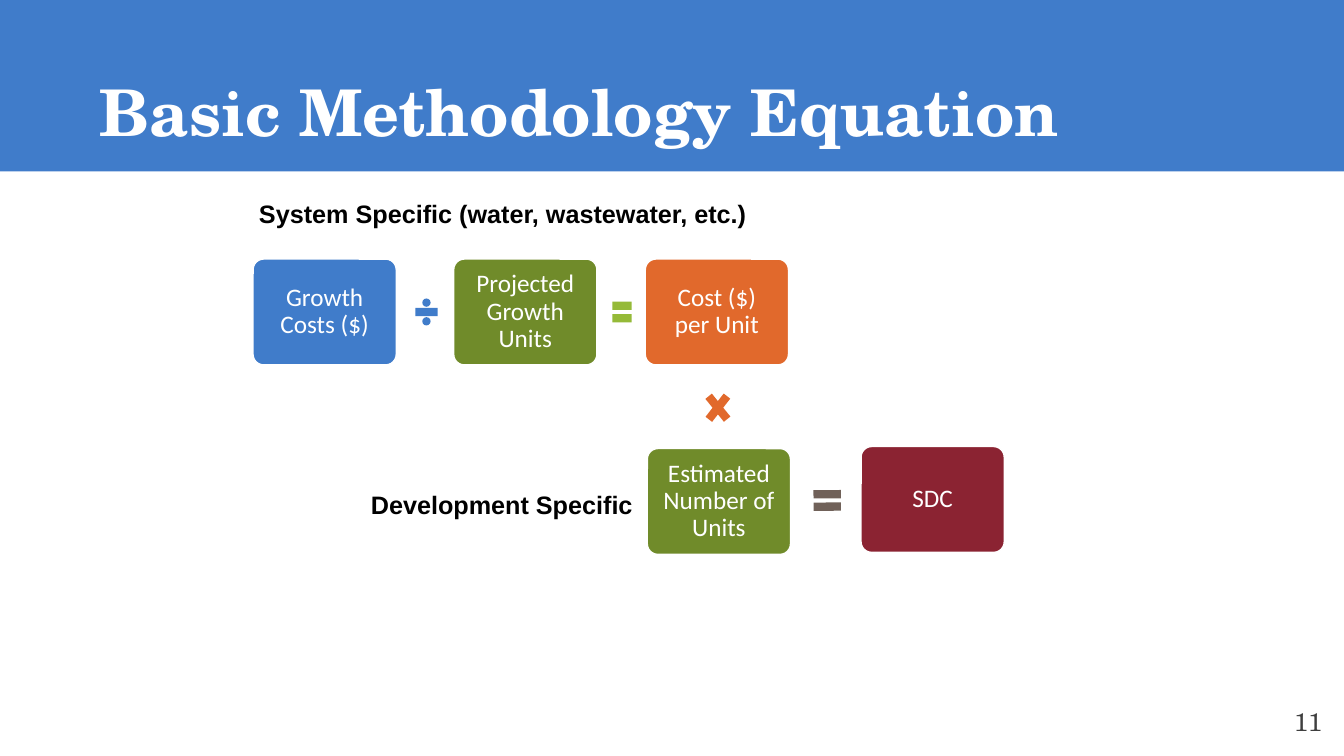
from pptx import Presentation
from pptx.dml.color import RGBColor
from pptx.enum.shapes import MSO_SHAPE
from pptx.enum.text import MSO_ANCHOR, PP_ALIGN
from pptx.util import Inches, Pt

BLUE = RGBColor(0x40, 0x7C, 0xCA)
GREEN = RGBColor(0x70, 0x8B, 0x2A)
LIME = RGBColor(0x95, 0xBA, 0x38)
ORANGE = RGBColor(0xE1, 0x69, 0x2C)
TAUPE = RGBColor(0x70, 0x61, 0x59)
MAROON = RGBColor(0x8B, 0x23, 0x32)
WHITE = RGBColor(0xFF, 0xFF, 0xFF)
BLACK = RGBColor(0, 0, 0)
GREY = RGBColor(0x3F, 0x3F, 0x3F)

SERIF = "TeX Gyre Schola"
TERM_WIDTH, TERM_HEIGHT = 1.42, 1.05
SIGN_HEIGHT = 0.35


def write(frame, text, font_name, size, color, bold=False, align=PP_ALIGN.LEFT):
    frame.word_wrap = True
    frame.text = text
    paragraph = frame.paragraphs[0]
    paragraph.alignment = align
    font = paragraph.font
    font.name, font.size, font.bold = font_name, Pt(size), bold
    font.color.rgb = color
    return paragraph


def add_label(slide, box, text, *style, **options):
    label = slide.shapes.add_textbox(*map(Inches, box))
    write(label.text_frame, text, *style, **options)


def add_block(slide, preset, box, color):
    block = slide.shapes.add_shape(preset, *map(Inches, box))
    block.shadow.inherit = False
    block.fill.solid()
    block.fill.fore_color.rgb = color
    block.line.fill.background()
    return block


def add_term(slide, left, top, text, color):
    box = (left, top, TERM_WIDTH, TERM_HEIGHT)
    term = add_block(slide, MSO_SHAPE.ROUNDED_RECTANGLE, box, color)
    term.adjustments[0] = 0.1
    term.line.color.rgb = WHITE
    term.line.width = Pt(1)
    frame = term.text_frame
    frame.margin_left = frame.margin_right = Inches(0.1)
    frame.margin_top = frame.margin_bottom = Inches(0.1)
    frame.vertical_anchor = MSO_ANCHOR.MIDDLE
    paragraph = write(frame, text, "Calibri", 18, WHITE, align=PP_ALIGN.CENTER)
    paragraph.line_spacing = 0.9


def add_sign(slide, preset, left, top, width, color, rotation=0):
    sign = add_block(slide, preset, (left, top, width, SIGN_HEIGHT), color)
    sign.rotation = rotation


def add_header(slide, left, top, width, height):
    add_block(slide, MSO_SHAPE.RECTANGLE, (left, top, width, height), BLUE)
    add_label(slide, (left + 0.89, top + 0.67, 10.98, 1), "Basic Methodology Equation",
              SERIF, 46, WHITE, bold=True)


def add_system_row(slide, left, top):
    add_label(slide, (left - 0.04, top - 0.65, 5.78, 0.4),
              "System Specific (water, wastewater, etc.)", "Arial", 18, BLACK, bold=True)
    for offset, text, color in [
        (0, "Growth Costs ($)", BLUE),
        (1.99, "Projected Growth Units", GREEN),
        (3.89, "Cost ($)\vper Unit", ORANGE),
    ]:
        add_term(slide, left + offset, top, text, color)
    sign_top = top + (TERM_HEIGHT - SIGN_HEIGHT) / 2
    add_sign(slide, MSO_SHAPE.MATH_DIVIDE, left + 1.57, sign_top, 0.3, BLUE)
    add_sign(slide, MSO_SHAPE.MATH_EQUAL, left + 3.53, sign_top, 0.26, LIME)


def add_development_row(slide, left, top):
    add_label(slide, (left, top + 0.36, 2.84, 0.4), "Development Specific",
              "Arial", 18, BLACK, bold=True)
    # Sign that joins the unit cost above to the number of units
    add_sign(slide, MSO_SHAPE.MATH_MULTIPLY, left + 3.32, top - 0.58, 0.44, ORANGE, 89.5)
    add_term(slide, left + 2.84, top, "Estimated Number of Units", GREEN)
    add_sign(slide, MSO_SHAPE.MATH_EQUAL, left + 4.44, top + 0.34, 0.37, TAUPE, 359.7)
    add_term(slide, left + 4.96, top - 0.02, "SDC", MAROON)


def main():
    presentation = Presentation()
    presentation.slide_width = Inches(13.33)
    presentation.slide_height = Inches(7.5)
    slide = presentation.slides.add_slide(presentation.slide_layouts[6])

    add_header(slide, 0, 0, 13.33, 1.7)
    add_system_row(slide, 2.51, 2.57)
    add_development_row(slide, 3.58, 4.45)

    # Page number
    add_label(slide, (12.62, 6.96, 0.71, 0.4), "11", SERIF, 18, GREY,
              align=PP_ALIGN.CENTER)
    presentation.save("out.pptx")


if __name__ == "__main__":
    main()
